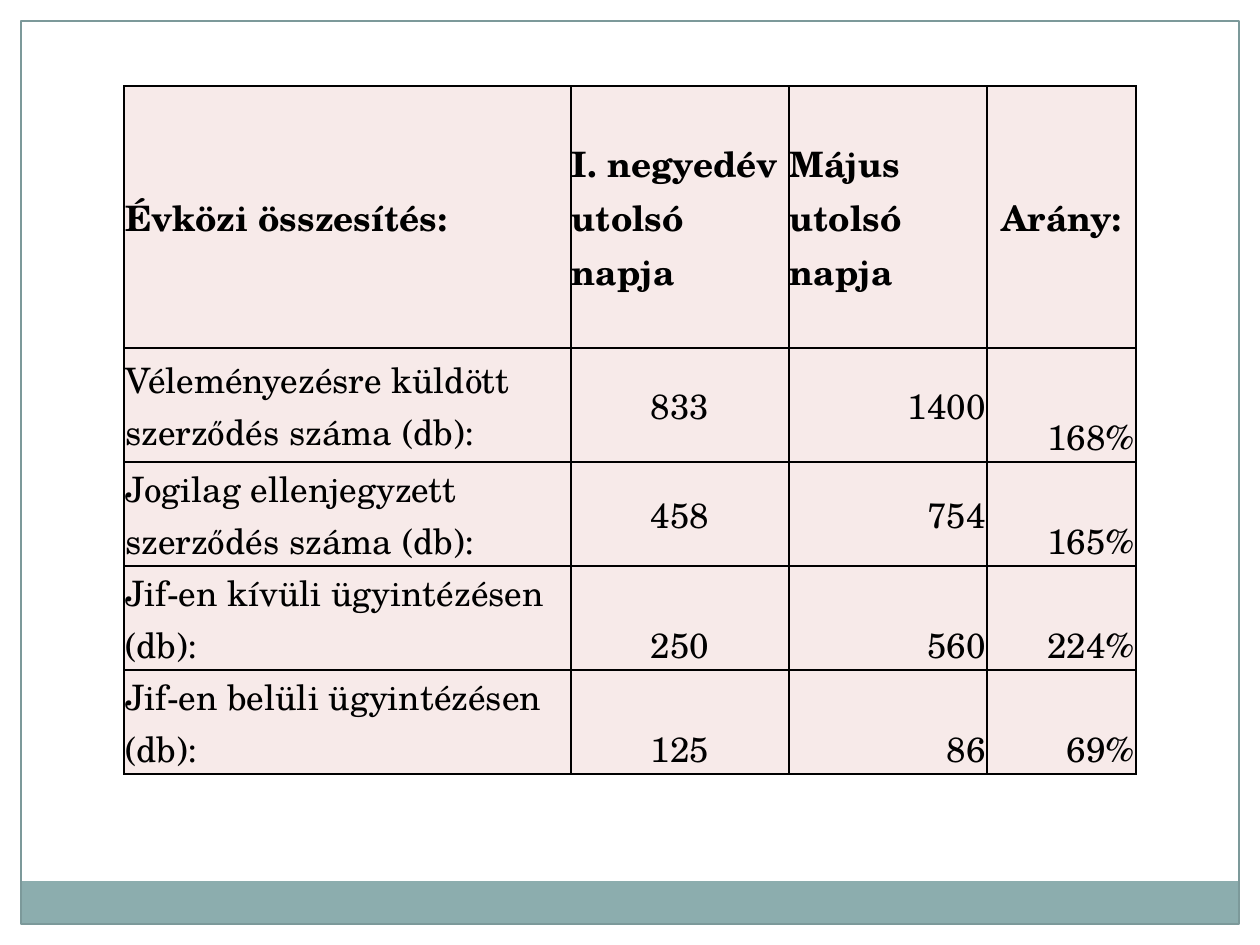
from dataclasses import dataclass

from lxml import etree
from pptx import Presentation
from pptx.dml.color import RGBColor
from pptx.enum.shapes import MSO_SHAPE
from pptx.enum.text import MSO_ANCHOR, PP_ALIGN
from pptx.oxml.ns import qn
from pptx.util import Pt

RECT = MSO_SHAPE.RECTANGLE
LEFT, CENTER, RIGHT = PP_ALIGN.LEFT, PP_ALIGN.CENTER, PP_ALIGN.RIGHT
MIDDLE, BOTTOM = MSO_ANCHOR.MIDDLE, MSO_ANCHOR.BOTTOM
PX = 914400 / 126
WIDTH, HEIGHT, MARGIN = 1260, 945, 21

COLS = (447, 218, 198, 149)
ROWS = (262, 114, 100, 100, 100)
DATA = (
    ("Évközi összesítés:", "I. negyedév utolsó napja", "Május utolsó napja", "Arány:"),
    ("Véleményezésre küldött szerződés száma (db):", "833", "1400", "168%"),
    ("Jogilag ellenjegyzett szerződés száma (db):", "458", "754", "165%"),
    ("Jif-en kívüli ügyintézésen (db):", "250", "560", "224%"),
    ("Jif-en belüli ügyintézésen (db):", "125", "86", "69%"),
)
HEAD_ALIGN = (LEFT, LEFT, LEFT, CENTER)
BODY_ALIGN = (LEFT, CENTER, RIGHT, RIGHT)


@dataclass(frozen=True)
class Theme:
    """Colours, font and sizes of the slide."""
    font: str = "TeX Gyre Schola"
    size: int = 20
    text: str = "000000"
    cell: str = "F7EAE9"
    grid: str = "000000"
    grid_width: int = 1
    margin: str = "FFFFFF"
    band: str = "8CADAE"
    frame: str = "7C999A"
    frame_width: float = 0.75


THEME = Theme()


def emu(px):
    """Turn px into EMU."""
    return round(px * PX)


def rgb(value):
    """Turn a hex string into a colour."""
    return RGBColor.from_string(value)


def set_all(obj, values):
    """Set attributes from a dict of format values."""
    for name, value in values.items():
        setattr(obj, name, value)


def add_rect(slide, box, fill=None, line=None):
    """Add a plain rectangle with an optional fill and outline."""
    sp = slide.shapes.add_shape(RECT, *map(emu, box))
    sp.shadow.inherit = False
    if fill:
        sp.fill.solid()
        sp.fill.fore_color.rgb = rgb(fill)
    else:
        sp.fill.background()
    if line:
        sp.line.color.rgb = rgb(line)
        sp.line.width = Pt(THEME.frame_width)
    else:
        sp.line.fill.background()


def add_margins(slide, box, size):
    """Lay margin strips along the top, right and left of the box."""
    x, y, w, h = box
    for strip in ((x, y, w, size), (x + w - size, y, size, h), (x, y, size, h)):
        add_rect(slide, strip, fill=THEME.margin)


def add_frame(slide, box, band_height):
    """Draw the page frame with a band along its bottom edge."""
    x, y, w, h = box
    add_rect(slide, (x, y + h - band_height, w, band_height), fill=THEME.band)
    add_rect(slide, box, line=THEME.frame)


def add_borders(cell):
    """Rule all four sides of a cell."""
    tc_pr = cell._tc.get_or_add_tcPr()
    for side in ("lnL", "lnR", "lnT", "lnB"):
        ln = etree.SubElement(tc_pr, qn(f"a:{side}"), w=str(Pt(THEME.grid_width)))
        fill = etree.SubElement(ln, qn("a:solidFill"))
        etree.SubElement(fill, qn("a:srgbClr"), val=THEME.grid)


def fill_cell(cell, text, align, anchor, bold):
    """Write and format one table cell."""
    add_borders(cell)
    cell.fill.solid()
    cell.fill.fore_color.rgb = rgb(THEME.cell)
    set_all(cell, {"vertical_anchor": anchor, "margin_left": emu(1), "margin_right": emu(1),
                   "margin_top": emu(1), "margin_bottom": 0})
    p = cell.text_frame.paragraphs[0]
    p.alignment = align
    r = p.add_run()
    r.text = text
    set_all(r.font, {"name": THEME.font, "size": Pt(THEME.size), "bold": bold})
    r.font.color.rgb = rgb(THEME.text)


def cell_anchor(row, col):
    """Give the vertical anchor of a cell."""
    return BOTTOM if row > 2 or (row > 0 and col == 3) else MIDDLE


def add_summary(slide, x, y):
    """Add the summary table with its top left corner at x, y."""
    box = (x, y, sum(COLS), sum(ROWS))
    table = slide.shapes.add_table(len(ROWS), len(COLS), *map(emu, box)).table
    set_all(table, {"first_row": False, "horz_banding": False})
    for column, width in zip(table.columns, COLS):
        column.width = emu(width)
    for i, (row, height) in enumerate(zip(table.rows, ROWS)):
        row.height = emu(height)
        aligns = BODY_ALIGN if i else HEAD_ALIGN
        for j, (text, align) in enumerate(zip(DATA[i], aligns)):
            fill_cell(table.cell(i, j), text, align, cell_anchor(i, j), i == 0)


def main():
    """Build and save the slide."""
    prs = Presentation()
    set_all(prs, {"slide_width": emu(WIDTH), "slide_height": emu(HEIGHT)})
    slide = prs.slides.add_slide(prs.slide_layouts[6])
    add_margins(slide, (0, 0, WIDTH, HEIGHT), MARGIN)
    add_frame(slide, (MARGIN, MARGIN, WIDTH - 2 * MARGIN, HEIGHT - 2 * MARGIN), 43)
    add_summary(slide, 124, 86)
    prs.save("out.pptx")


if __name__ == "__main__":
    main()
